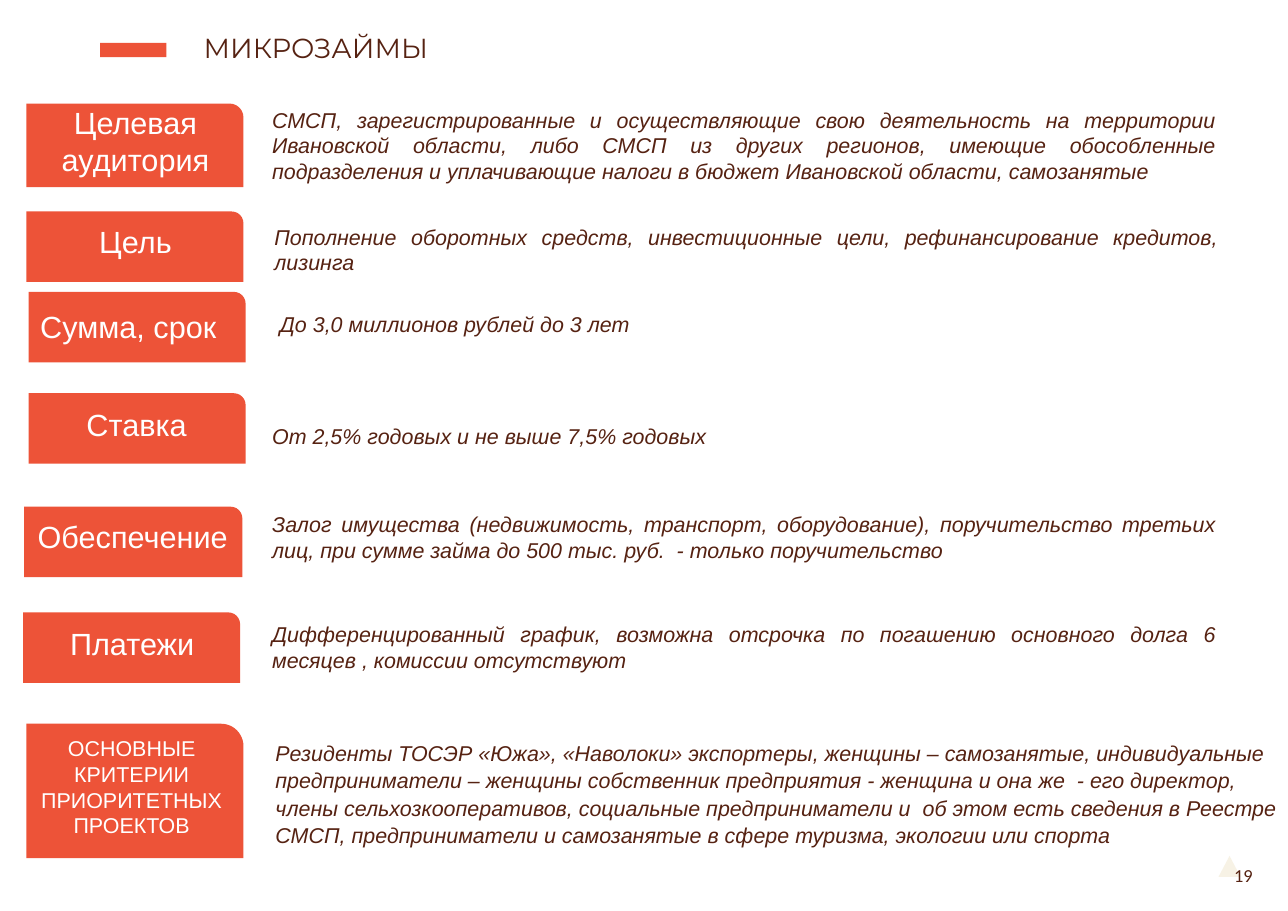
from pptx import Presentation
from pptx.dml.color import RGBColor
from pptx.enum.shapes import MSO_SHAPE as Form
from pptx.enum.text import MSO_ANCHOR as Anchor, PP_ALIGN as Align
from pptx.util import Inches, Pt

RED, BROWN, WHITE, CREAM = "ED5338", "562212", "FFFFFF", "F7F2E5"


def color(code):
    return RGBColor.from_string(code)


class Deck:
    """Draw the elements of the current slide in one shared style."""

    def __init__(self, wide, high):
        self.prs = Presentation()
        self.prs.slide_width, self.prs.slide_height = Inches(wide), Inches(high)
        self.slide = self.prs.slides.add_slide(self.prs.slide_layouts[6])

    def shape(self, form, box, fill=None, host=None):
        shapes = (host or self.slide).shapes
        item = shapes.add_shape(form, *map(Inches, box))
        item.shadow.inherit = False
        item.line.fill.background()
        if fill:
            item.fill.solid()
            item.fill.fore_color.rgb = color(fill)
        else:
            item.fill.background()
        return item

    def letter(self, item, words, size, tint, face="Arial", align=Align.LEFT,
               anchor=Anchor.TOP, pad=(0.1, 0.05, 0.1, 0.05), lead=1.0, after=0):
        frame = item.text_frame
        frame.word_wrap = True
        frame.vertical_anchor = anchor
        (frame.margin_left, frame.margin_top,
         frame.margin_right, frame.margin_bottom) = map(Inches, pad)
        frame.text = words
        para = frame.paragraphs[0]
        para.alignment, para.line_spacing = align, lead
        para.space_after = Pt(after)
        font = para.runs[0].font
        font.name, font.size, font.color.rgb = face, Pt(size), color(tint)
        return font

    def text(self, box, words, size, **style):
        item = self.slide.shapes.add_textbox(*map(Inches, box))
        return self.letter(item, words, size, BROWN, **style)

    def note(self, box, words, **style):
        font = self.text(box, words, 14, pad=(0, 0.02, 0, 0), **style)
        font.italic = True

    def label(self, tab, box, words, size):
        group = self.slide.shapes.add_group_shape()
        self.shape(Form.ROUND_1_RECTANGLE, tab, RED, group)
        item = self.shape(Form.ROUND_2_SAME_RECTANGLE, box, host=group)
        self.letter(item, words, size, WHITE, align=Align.CENTER,
                    anchor=Anchor.MIDDLE, after=5.3)


ROWS = [
    ("Целевая аудитория", (0.24, 0.94, 1.97, 0.76), (0.39, 0.92, 1.68, 0.68),
     "СМСП, зарегистрированные и осуществляющие свою деятельность на территории "
     "Ивановской области, либо СМСП из других регионов, имеющие обособленные "
     "подразделения и уплачивающие налоги в бюджет Ивановской области, самозанятые",
     (2.47, 0.95, 8.57, 1)),
    ("Цель", (0.24, 1.92, 1.97, 0.64), (0.39, 1.95, 1.68, 0.46),
     "Пополнение оборотных средств, инвестиционные цели, рефинансирование "
     "кредитов, лизинга", (2.49, 2.01, 8.57, 0.49)),
    ("Сумма, срок", (0.26, 2.65, 1.97, 0.64), (0.11, 2.72, 2.11, 0.46),
     "До 3,0 миллионов рублей до 3 лет", (2.54, 2.8, 8.5, 0.53)),
    ("Ставка", (0.26, 3.57, 1.97, 0.64), (0.4, 3.61, 1.68, 0.46),
     "От 2,5% годовых и не выше 7,5% годовых", (2.47, 3.82, 8.57, 0.25)),
    ("Обеспечение", (0.22, 4.6, 1.98, 0.64), (0.22, 4.63, 1.97, 0.46),
     "Залог имущества (недвижимость, транспорт, оборудование), поручительство "
     "третьих лиц, при сумме займа до 500 тыс. руб.  - только поручительство",
     (2.47, 4.62, 8.57, 0.49)),
    ("Платежи", (0.21, 5.56, 1.97, 0.64), (0.36, 5.6, 1.68, 0.46),
     "Дифференцированный график, возможна отсрочка по погашению основного долга "
     "6 месяцев , комиссии отсутствуют", (2.47, 5.62, 8.57, 0.49)),
]
RULES = (
    "Резиденты ТОСЭР «Южа», «Наволоки» экспортеры, женщины – самозанятые, "
    "индивидуальные предприниматели – женщины собственник предприятия - женщина "
    "и она же  - его директор, члены сельхозкооперативов, социальные "
    "предприниматели и  об этом есть сведения в Реестре СМСП, предприниматели и "
    "самозанятые в сфере туризма, экологии или спорта")


def main():
    deck = Deck(11.69, 8.27)
    deck.shape(Form.ISOSCELES_TRIANGLE, (11.06, 7.77, 0.2, 0.19), CREAM)
    deck.text((11.03, 7.8, 0.51, 0.3), "19", 12, face="Calibri", align=Align.CENTER)
    deck.shape(Form.RECTANGLE, (0.91, 0.39, 0.6, 0.13), RED)
    deck.text((1.75, 0.28, 7.56, 0.61), "МИКРОЗАЙМЫ", 18, face="Montserrat", lead=0.85)
    for name, tab, box, words, place in ROWS:
        deck.label(tab, box, name, 20)
        deck.note(place, words, align=Align.JUSTIFY)
    deck.label((0.24, 6.57, 1.97, 1.22), (0.19, 6.57, 2.01, 1.09),
               "ОСНОВНЫЕ КРИТЕРИИ ПРИОРИТЕТНЫХ ПРОЕКТОВ", 14)
    deck.note((2.5, 6.68, 9.22, 1), RULES, lead=1.07, after=3.5)
    deck.prs.save("out.pptx")


if __name__ == "__main__":
    main()
